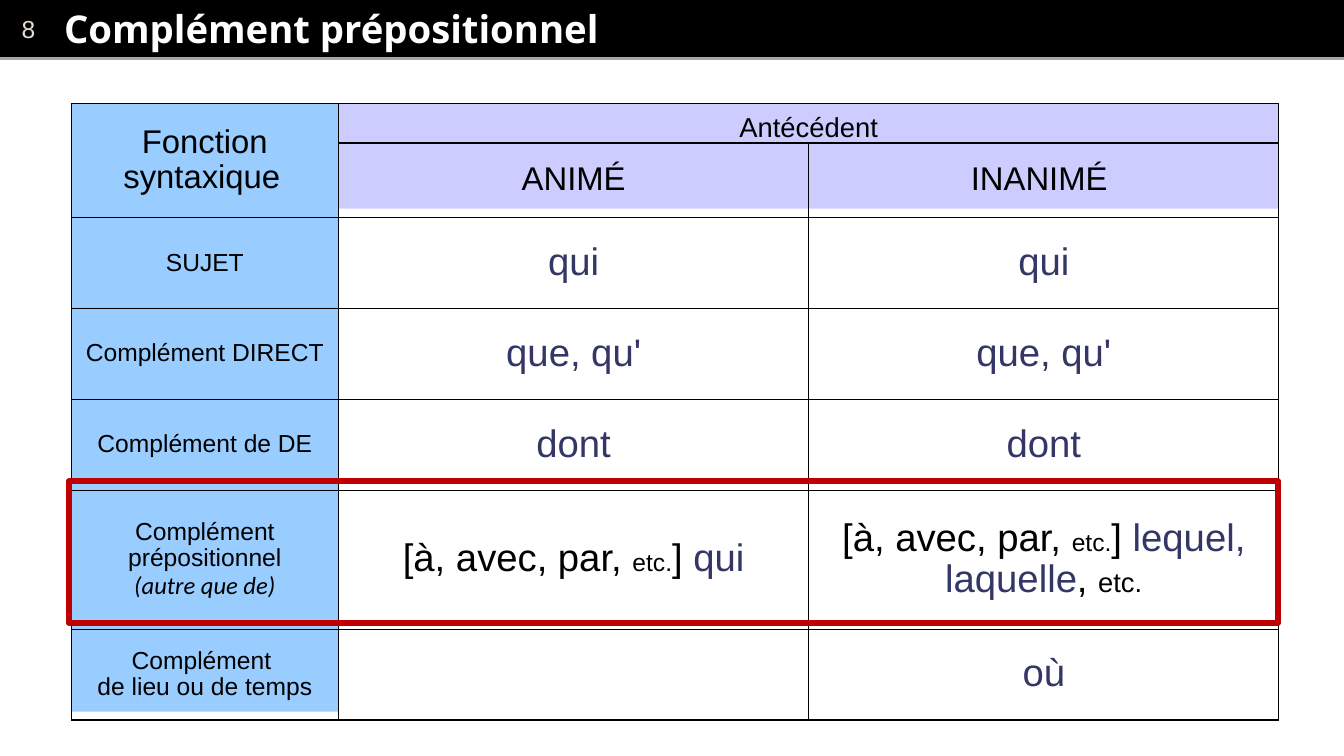
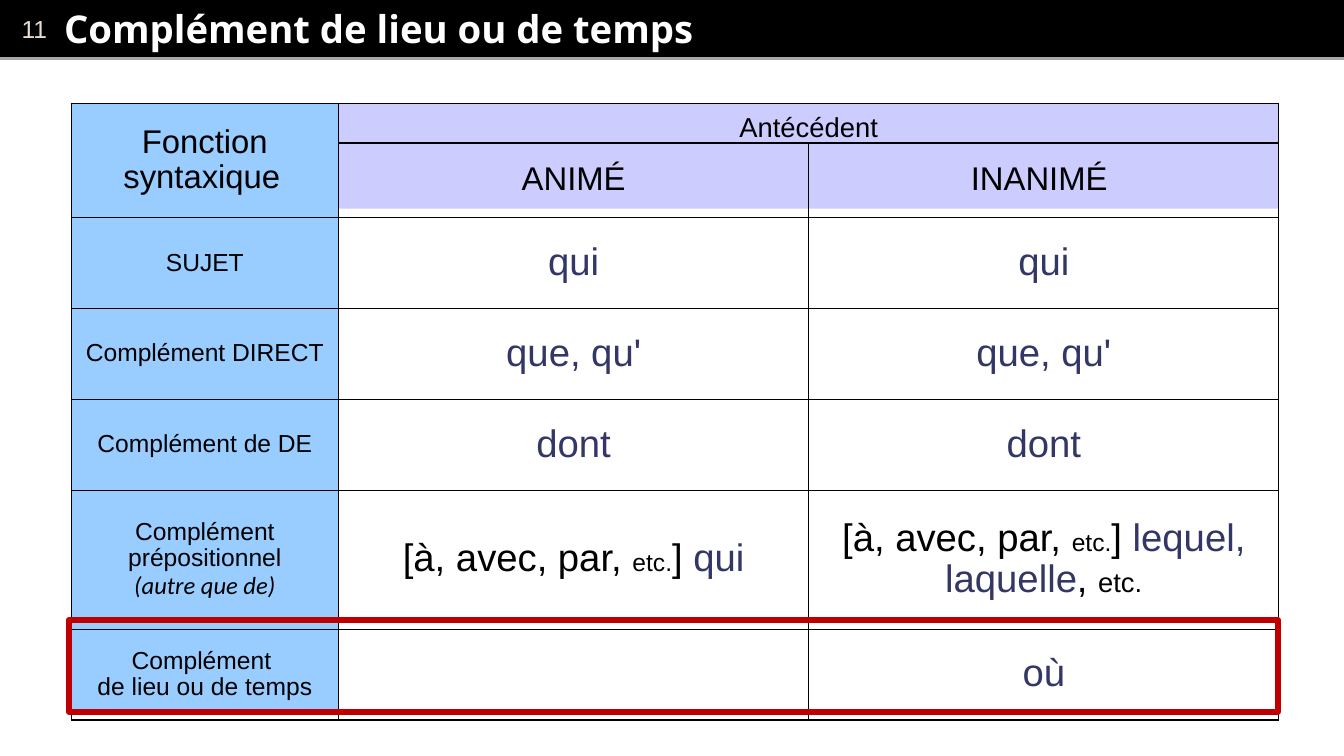
from dataclasses import dataclass

from lxml import etree
from pptx import Presentation
from pptx import util as u
from pptx.dml.color import RGBColor
from pptx.enum import shapes, text
from pptx.oxml import ns

Pt = u.Pt
BLACK, WHITE, NAVY, RED = "000000", "FFFFFF", "333766", "C00000"
BLUE, LILAC, GREY, BEIGE = "99CCFF", "CCCCFF", "A6A6A6", "E7DED1"
SLIDE_W, SLIDE_H = 982.8, 553
BAND_H = 41.8
TABLE_X, TABLE_Y = 52, 75.6
COLS = [195.6, 343.8, 343.8]
ROWS = [29, 53.3, 66.5, 66.5, 66.5, 101.5, 66.5]
LINE_BREAK = "\v"


@dataclass(frozen=True)
class Run:
    text: str
    size: float = 18
    color: str = BLACK
    font: str = "Arial"
    bold: bool = False
    italic: bool = False


@dataclass(frozen=True)
class Box:
    x: float
    y: float
    w: float
    h: float


@dataclass(frozen=True)
class Page:
    number: str
    title: str
    frame: Box


def pronoun(word: str) -> list[Run]:
    return [Run(word, 28, NAVY)]


PREPOSITIONS = [Run("[à, avec, par, ", 28), Run("etc."), Run("] ", 28)]
GRID = [
    [[Run("Fonction syntaxique", 24), Run(" ", 16)], [Run("Antécédent", 20)], []],
    [[], [Run("ANIMÉ", 24)], [Run("INANIMÉ ", 24)]],
    [[Run("SUJET")], pronoun("qui"), pronoun("qui")],
    [[Run("Complément DIRECT")], pronoun("que, qu'"), pronoun("que, qu'")],
    [[Run("Complément de DE")], pronoun("dont"), pronoun("dont")],
    [
        [Run("Complément prépositionnel"), Run(LINE_BREAK),
         Run("(autre que de)", font="Calibri", italic=True)],
        PREPOSITIONS + pronoun("qui"),
        PREPOSITIONS + pronoun("lequel, laquelle") + [Run(", ", 28), Run("etc.", 20)],
    ],
    [
        [Run("Complément "), Run(LINE_BREAK), Run("de lieu ou de temps")],
        [],
        pronoun("où"),
    ],
]
PAGES = [
    Page("8", "Complément prépositionnel", Box(50.4, 352, 884, 103.6)),
    Page("11", "Complément de lieu ou de temps", Box(50.4, 453.6, 884, 67)),
]


def rgb(value: str) -> RGBColor:
    return RGBColor.from_string(value)


def write_runs(p, runs: list[Run]) -> None:
    for run in runs:
        if run.text == LINE_BREAK:
            p.add_line_break()
            continue
        r = p.add_run()
        r.text = run.text
        r.font.name, r.font.size = run.font, Pt(run.size)
        r.font.bold, r.font.italic = run.bold, run.italic
        r.font.color.rgb = rgb(run.color)


def add_rect(s, box: Box, fill: str = "", line: str = "", width: float = 0):
    sp = s.shapes.add_shape(shapes.MSO_SHAPE.RECTANGLE,
                            Pt(box.x), Pt(box.y), Pt(box.w), Pt(box.h))
    sp.shadow.inherit = False
    if fill:
        sp.fill.solid()
        sp.fill.fore_color.rgb = rgb(fill)
    else:
        sp.fill.background()
    if line:
        sp.line.color.rgb = rgb(line)
        sp.line.width = Pt(width)
    else:
        sp.line.fill.background()
    return sp


def fill_frame(tf, run: Run, left: float) -> None:
    tf.word_wrap = True
    tf.vertical_anchor = text.MSO_ANCHOR.MIDDLE
    tf.margin_left = Pt(left)
    tf.margin_right = tf.margin_top = tf.margin_bottom = Pt(2.9)
    p = tf.paragraphs[0]
    p.alignment = text.PP_ALIGN.LEFT
    write_runs(p, [run])


def add_header(s, page: Page) -> None:
    band = add_rect(s, Box(0, 0, SLIDE_W, BAND_H), BLACK, BLACK, 0.75)
    fill_frame(band.text_frame, Run(page.number, color=BEIGE), 15.8)
    rule = s.shapes.add_connector(shapes.MSO_CONNECTOR.STRAIGHT,
                                  Pt(0), Pt(43), Pt(SLIDE_W), Pt(43))
    rule.line.color.rgb = rgb(GREY)
    rule.line.width = Pt(2)
    etree.SubElement(rule._element.spPr, ns.qn("a:effectLst"))
    title = s.shapes.add_textbox(Pt(44), Pt(0.7), Pt(925), Pt(40.3))
    fill_frame(title.text_frame, Run(page.title, 28, WHITE, "Open Sans", True), 2.9)


def add_borders(cell) -> None:
    props = cell._tc.get_or_add_tcPr()
    for side in ("lnL", "lnR", "lnT", "lnB"):
        ln = etree.SubElement(props, ns.qn(f"a:{side}"), w=str(Pt(1)))
        solid = etree.SubElement(ln, ns.qn("a:solidFill"))
        etree.SubElement(solid, ns.qn("a:srgbClr"), val=BLACK)


def add_grid(s) -> None:
    add_rect(s, Box(TABLE_X, TABLE_Y, COLS[0], 445), BLUE)
    add_rect(s, Box(TABLE_X + COLS[0], TABLE_Y, sum(COLS[1:]), 77), LILAC)
    table = s.shapes.add_table(len(ROWS), len(COLS), Pt(TABLE_X), Pt(TABLE_Y),
                               Pt(sum(COLS)), Pt(sum(ROWS))).table
    table.first_row = table.horz_banding = False
    for column, width in zip(table.columns, COLS):
        column.width = Pt(width)
    for row, height in zip(table.rows, ROWS):
        row.height = Pt(height)
    for i, row in enumerate(GRID):
        for j, runs in enumerate(row):
            cell = table.cell(i, j)
            add_borders(cell)
            cell.fill.background()
            cell.margin_left = cell.margin_right = Pt(1.5)
            cell.margin_top = cell.margin_bottom = Pt(0)
            cell.vertical_anchor = text.MSO_ANCHOR.MIDDLE
            p = cell.text_frame.paragraphs[0]
            p.alignment = text.PP_ALIGN.CENTER
            p.line_spacing = 0.95
            write_runs(p, runs)
    table.cell(0, 1).vertical_anchor = text.MSO_ANCHOR.BOTTOM
    table.cell(0, 0).merge(table.cell(1, 0))
    table.cell(0, 1).merge(table.cell(0, 2))


def main() -> None:
    prs = Presentation()
    prs.slide_width, prs.slide_height = Pt(SLIDE_W), Pt(SLIDE_H)
    for page in PAGES:
        s = prs.slides.add_slide(prs.slide_layouts[6])
        add_header(s, page)
        add_grid(s)
        add_rect(s, page.frame, line=RED, width=4.5)
    prs.save("out.pptx")


if __name__ == "__main__":
    main()
